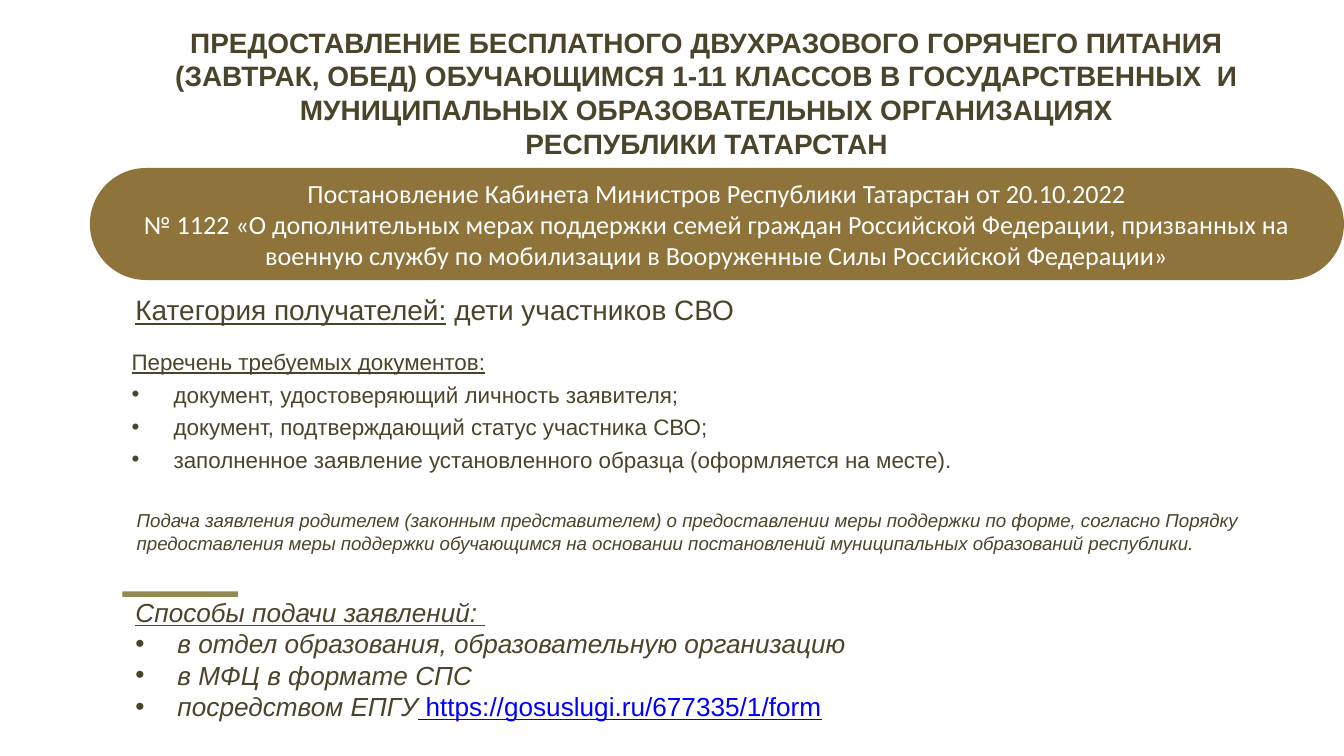
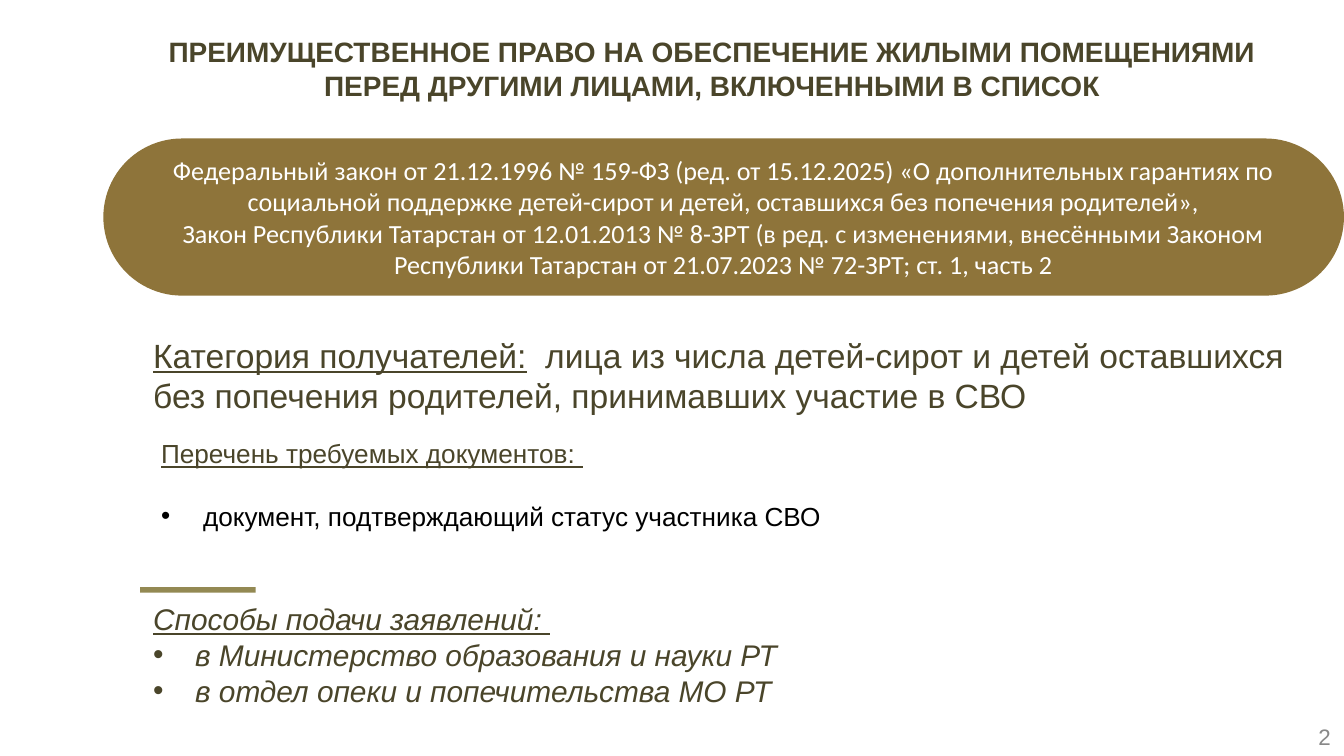
from lxml.etree import SubElement
from pptx import Presentation
from pptx.dml.color import RGBColor
from pptx.enum.shapes import MSO_SHAPE as Shape
from pptx.enum.text import MSO_ANCHOR as Anchor, PP_ALIGN as Align
from pptx.oxml.ns import qn
from pptx.util import Pt

INK = RGBColor(0x4A, 0x45, 0x2A)
BAND = RGBColor(0x8E, 0x74, 0x3A)
ACCENT = RGBColor(0x93, 0x89, 0x53)
WHITE = RGBColor(0xFF, 0xFF, 0xFF)
BLACK = RGBColor(0, 0, 0)
GREY = RGBColor(0x88, 0x88, 0x88)
LINK = RGBColor(0, 0, 0xFF)
INDENT = Pt(22.5)


def write(frame, lines, size, color=INK, align=Align.LEFT, font="Arial", bold=False, italic=False):
    frame.word_wrap = True
    frame.text = "\n".join(lines)
    for paragraph in frame.paragraphs:
        paragraph.alignment = align
        for run in paragraph.runs:
            run.font.name = font
            run.font.size = Pt(size)
            run.font.color.rgb = color
            run.font.bold = bold
            run.font.italic = italic
    return frame


def write_list(frame, heading, items, size, gap=0, color=INK, align=Align.LEFT, italic=False):
    write(frame, [heading, *items], size, color, align, italic=italic)
    title, *points = frame.paragraphs
    title.runs[0].font.underline = True
    title.runs[0].font.color.rgb = INK
    for point in points:
        properties = point._p.get_or_add_pPr()
        properties.set("marL", str(INDENT))
        properties.set("indent", str(-INDENT))
        SubElement(properties, qn("a:buFont"), typeface="Arial")
        SubElement(properties, qn("a:buChar"), char="•")
        point.space_before = Pt(gap)
    return frame


measures = [
    {
        "title": ["ПРЕДОСТАВЛЕНИЕ БЕСПЛАТНОГО ДВУХРАЗОВОГО ГОРЯЧЕГО ПИТАНИЯ (ЗАВТРАК, ОБЕД) "
                  "ОБУЧАЮЩИМСЯ 1-11 КЛАССОВ В ГОСУДАРСТВЕННЫХ  И МУНИЦИПАЛЬНЫХ ОБРАЗОВАТЕЛЬНЫХ ОРГАНИЗАЦИЯХ",
                  "РЕСПУБЛИКИ ТАТАРСТАН"],
        "title_box": (57, 10, 643, 80),
        "law": ["Постановление Кабинета Министров Республики Татарстан от 20.10.2022",
                "№ 1122 «О дополнительных мерах поддержки семей граждан Российской Федерации, "
                "призванных на военную службу по мобилизации в Вооруженные Силы Российской Федерации»"],
        "law_box": (48.2, 90, 671.8, 60),
        "category": " дети участников СВО",
        "category_box": (65.5, 153.4, 618, 25),
        "category_size": 15,
        "documents_heading": "Перечень требуемых документов:",
        "documents": ["документ, удостоверяющий личность заявителя;",
                      "документ, подтверждающий статус участника СВО;",
                      "заполненное заявление установленного образца (оформляется на месте)."],
        "documents_box": (63.4, 183, 637, 83.5),
        "documents_style": {"size": 12, "gap": 3},
        "accent_box": (65.5, 316.8, 62, 3),
        "ways": ["в отдел образования, образовательную организацию",
                 "в МФЦ в формате СПС",
                 "посредством ЕПГУ"],
        "ways_box": (65.5, 316, 618, 75),
        "ways_size": 14,
    },
    {
        "title": ["ПРЕИМУЩЕСТВЕННОЕ ПРАВО НА ОБЕСПЕЧЕНИЕ ЖИЛЫМИ ПОМЕЩЕНИЯМИ "
                  "ПЕРЕД ДРУГИМИ ЛИЦАМИ, ВКЛЮЧЕННЫМИ В СПИСОК"],
        "title_box": (57, 15.2, 649, 44),
        "law": ["Федеральный закон от 21.12.1996 № 159-ФЗ (ред. от 15.12.2025) «О дополнительных гарантиях "
                "по социальной поддержке детей-сирот и детей, оставшихся без попечения родителей»,",
                "Закон Республики Татарстан от 12.01.2013 № 8-ЗРТ (в ред. с изменениями, внесёнными Законом "
                "Республики Татарстан от 21.07.2023 № 72-ЗРТ; ст. 1, часть 2"],
        "law_box": (55.4, 74.2, 664.6, 84.2),
        "category": "  лица из числа детей-сирот и детей оставшихся без попечения родителей, "
                    "принимавших участие в СВО",
        "category_box": (75, 175.7, 631, 51),
        "category_size": 18,
        "documents_heading": "Перечень требуемых документов: ",
        "documents": ["документ, подтверждающий статус участника СВО"],
        "documents_box": (79.2, 231, 617, 58.3),
        "documents_style": {"size": 14, "gap": 16.5, "color": BLACK},
        "accent_box": (75, 314.6, 62, 3),
        "ways": ["в Министерство образования и науки РТ",
                 "в отдел опеки и попечительства МО РТ"],
        "ways_box": (75, 318.2, 618, 65.5),
        "ways_size": 16,
    },
]

deck = Presentation()
deck.slide_width, deck.slide_height = Pt(720), Pt(405)

for measure in measures:
    slide = deck.slides.add_slide(deck.slide_layouts[6])
    frames = {}
    for part in ("title", "law", "accent", "category", "documents", "ways"):
        box = [Pt(length) for length in measure[part + "_box"]]
        if part in ("law", "accent"):
            block = slide.shapes.add_shape(Shape.ROUNDED_RECTANGLE if part == "law" else Shape.RECTANGLE, *box)
            block.shadow.inherit = False
            block.fill.solid()
            block.fill.fore_color.rgb = BAND if part == "law" else ACCENT
            block.line.fill.background()
            if part == "law":
                block.adjustments[0] = 0.5
        else:
            block = slide.shapes.add_textbox(*box)
        frames[part] = block.text_frame

    write(frames["title"], measure["title"], 15, align=Align.CENTER, bold=True)
    write(frames["law"], measure["law"], 14, WHITE, Align.CENTER, "Calibri")
    frames["law"].vertical_anchor = Anchor.MIDDLE

    category = write(frames["category"], ["Категория получателей:"], measure["category_size"]).paragraphs[0]
    category.runs[0].font.underline = True
    recipients = category.add_run()
    recipients.text = measure["category"]
    recipients.font.name = "Arial"
    recipients.font.size = Pt(measure["category_size"])
    recipients.font.color.rgb = INK

    write_list(frames["documents"], measure["documents_heading"], measure["documents"],
               **measure["documents_style"])
    ways = write_list(frames["ways"], "Способы подачи заявлений: ", measure["ways"],
                      measure["ways_size"], align=Align.JUSTIFY, italic=True)

    if measure is measures[0]:
        address = ways.paragraphs[-1].add_run()
        address.text = " https://gosuslugi.ru/677335/1/form"
        address.font.name = "Arial"
        address.font.size = Pt(measure["ways_size"])
        address.font.color.rgb = LINK
        address.font.underline = True
        note = slide.shapes.add_textbox(Pt(66.2), Pt(269.3), Pt(637), Pt(32))
        write(note.text_frame,
              ["Подача заявления родителем (законным представителем) о предоставлении меры поддержки по форме, "
               "согласно Порядку предоставления меры поддержки обучающимся на основании постановлений "
               "муниципальных образований республики."], 10, italic=True)
    else:
        page = slide.shapes.add_textbox(Pt(552.2), Pt(383.6), Pt(167.8), Pt(21.6))
        write(page.text_frame, ["2"], 12, GREY, Align.RIGHT)
        page.text_frame.vertical_anchor = Anchor.MIDDLE

deck.save("out.pptx")
